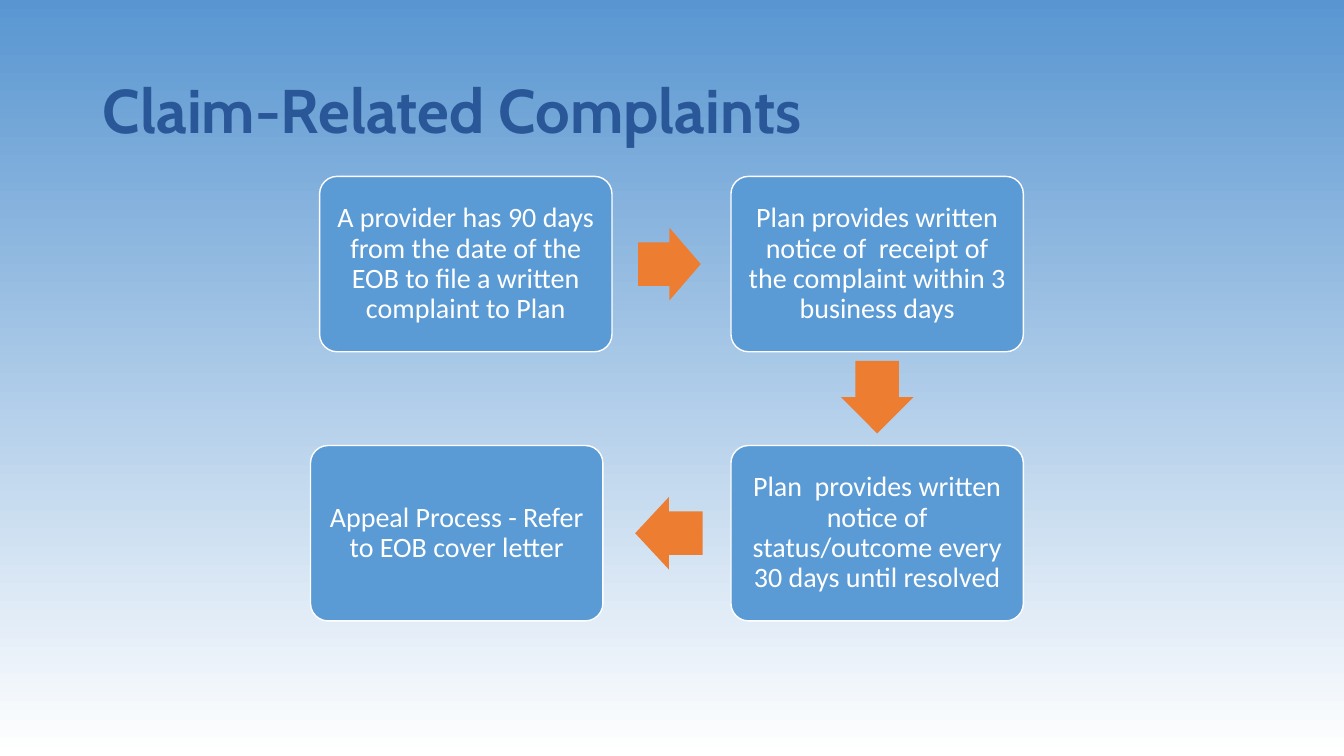
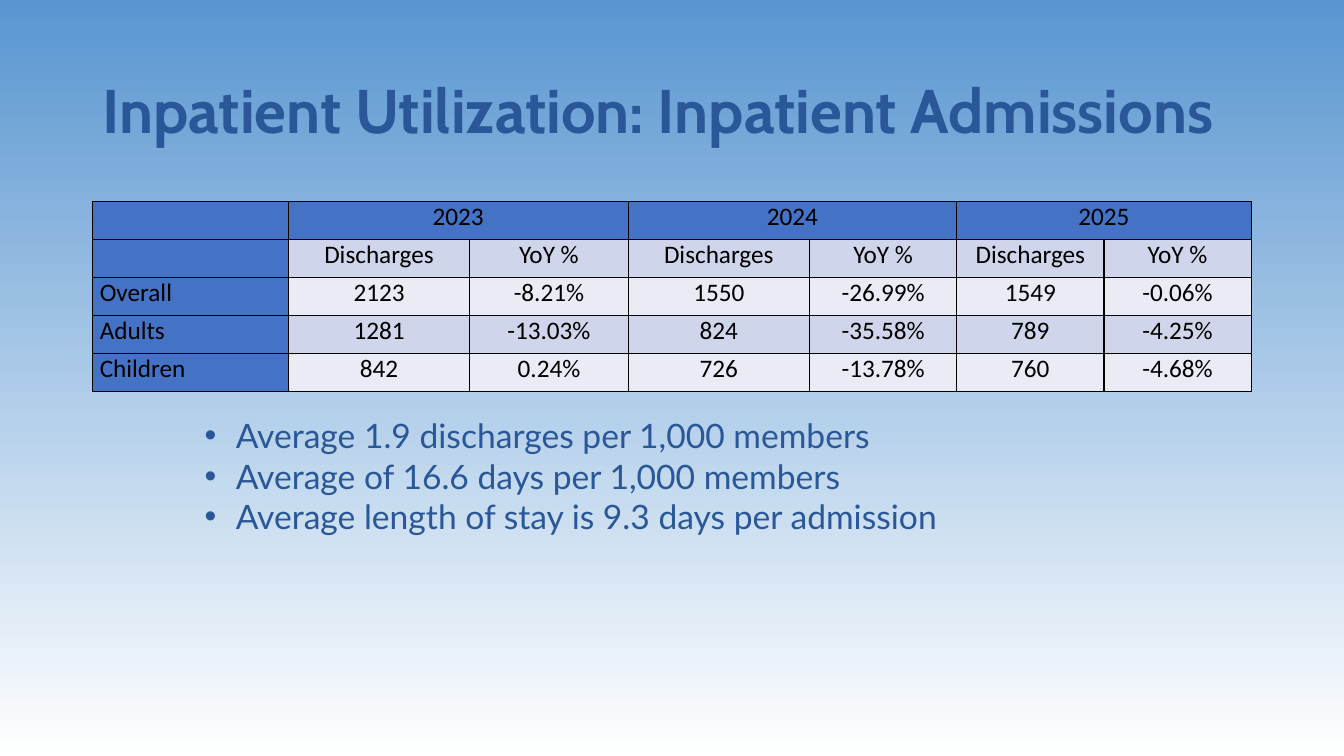
from dataclasses import dataclass

from lxml import etree
from pptx import Presentation
from pptx.dml.color import RGBColor
from pptx.enum.shapes import MSO_SHAPE
from pptx.enum.text import MSO_ANCHOR, PP_ALIGN
from pptx.oxml.ns import qn
from pptx.util import Inches, Pt

LEFT, CENTER = PP_ALIGN.LEFT, PP_ALIGN.CENTER
TOP, MIDDLE = MSO_ANCHOR.TOP, MSO_ANCHOR.MIDDLE
ROUND = MSO_SHAPE.ROUNDED_RECTANGLE
RIGHT_ARROW = MSO_SHAPE.RIGHT_ARROW
DOWN_ARROW = MSO_SHAPE.DOWN_ARROW
LEFT_ARROW = MSO_SHAPE.LEFT_ARROW


@dataclass(frozen=True)
class Theme:
    sky: str = "5996D1"
    white: str = "FFFFFF"
    black: str = "000000"
    navy: str = "2A5798"
    box: str = "5B9BD5"
    arrow: str = "ED7D31"
    head: str = "4472C4"
    dark: str = "CFD5EA"
    pale: str = "E9EBF5"
    title_font: str = "Cabin"
    body_font: str = "Calibri"
    list_font: str = "Lato"
    title_size: int = 44
    list_size: int = 24
    box_size: int = 20
    cell_size: int = 18


T = Theme()

FLOW_TITLE = "Claim-Related Complaints"
BOX_W, BOX_H = 2.9, 1.74
ROW_1, ROW_2 = 1.75, 4.42
STEPS = [
    (3.17, ROW_1, "A provider has 90 days from the date of the EOB to file a written complaint to Plan"),
    (7.25, ROW_1, "Plan provides written notice of  receipt of the complaint within 3 business days"),
    (7.25, ROW_2, "Plan  provides written notice of status/outcome every 30 days until resolved"),
    (3.08, ROW_2, "Appeal Process - Refer to EOB cover letter"),
]
ARROWS = [
    (RIGHT_ARROW, 6.33, 2.26, 0.62),
    (DOWN_ARROW, 8.34, 3.58, 0.72),
    (LEFT_ARROW, 6.3, 4.93, 0.67),
]
ARROW_H = 0.72

STAY_TITLE = "Inpatient Utilization: Inpatient Admissions"
YEARS = ["2023", "2024", "2025"]
PAIR = ["Discharges", "YoY %"]
DATA = [
    ["Overall", "2123", "-8.21%", "1550", "-26.99%", "1549", "-0.06%"],
    ["Adults", "1281", "-13.03%", "824", "-35.58%", "789", "-4.25%"],
    ["Children", "842", "0.24%", "726", "-13.78%", "760", "-4.68%"],
]
COLS = [1.94, 1.8, 1.57, 1.8, 1.46, 1.46, 1.46]
TABLE_H = 1.88
POINTS = [
    "Average 1.9 discharges per 1,000 members",
    "Average of 16.6 days per 1,000 members",
    "Average length of stay is 9.3 days per admission",
]


def rgb(code):
    return RGBColor.from_string(code)


def place(*sizes):
    return [Inches(size) for size in sizes]


def write(frame, *lines, size, color, font=T.body_font, bold=False,
          align=LEFT, space=1.0, bullet=None):
    for i, line in enumerate(lines):
        para = frame.paragraphs[0] if i == 0 else frame.add_paragraph()
        para.alignment = align
        para.line_spacing = space
        if bullet:
            props = para._p.get_or_add_pPr()
            props.set("marL", str(Inches(0.31)))
            props.set("indent", str(-Inches(0.31)))
            etree.SubElement(props, qn("a:buFont"), typeface="Arial")
            etree.SubElement(props, qn("a:buChar"), char=bullet)
        run = para.add_run()
        run.text = line
        run.font.name = font
        run.font.size = Pt(size)
        run.font.bold = bold
        run.font.color.rgb = rgb(color)


def text_box(slide, area, *lines, anchor=TOP, **style):
    frame = slide.shapes.add_textbox(*place(*area)).text_frame
    frame.word_wrap = True
    frame.vertical_anchor = anchor
    write(frame, *lines, **style)


def add_shape(slide, kind, area, fill, line=None):
    shape = slide.shapes.add_shape(kind, *place(*area))
    shape.shadow.inherit = False
    shape.fill.solid()
    shape.fill.fore_color.rgb = rgb(fill)
    if line:
        shape.line.color.rgb = rgb(line)
        shape.line.width = Pt(1)
    else:
        shape.line.fill.background()
    return shape


def new_slide(deck, title):
    slide = deck.slides.add_slide(deck.slide_layouts[6])
    fill = slide.background.fill
    fill.gradient()
    fill.gradient_angle = 270
    for stop, color, point in zip(fill.gradient_stops, (T.sky, T.white), (0, 1)):
        stop.color.rgb = rgb(color)
        stop.position = point
    text_box(slide, (0.92, 0.4, 11.5, 1.45), title, anchor=MIDDLE, size=T.title_size,
             color=T.navy, font=T.title_font, bold=True, space=0.9)
    return slide


def add_step(slide, left, top, text):
    box = add_shape(slide, ROUND, (left, top, BOX_W, BOX_H), T.box, T.white)
    box.adjustments[0] = 0.1
    frame = box.text_frame
    frame.word_wrap = True
    frame.vertical_anchor = MIDDLE
    frame.margin_left = frame.margin_right = Inches(0.08)
    frame.margin_top = frame.margin_bottom = Inches(0.08)
    write(frame, text, size=T.box_size, color=T.white, align=CENTER, space=0.9)


def flow_slide(deck):
    slide = new_slide(deck, FLOW_TITLE)
    for step in STEPS:
        add_step(slide, *step)
    for kind, left, top, width in ARROWS:
        arrow = add_shape(slide, kind, (left, top, width, ARROW_H), T.arrow)
        arrow.adjustments[0] = 0.6
        arrow.adjustments[1] = 0.5


def add_edges(cell):
    props = cell._tc.get_or_add_tcPr()
    for side in ("lnL", "lnR", "lnT", "lnB"):
        edge = etree.SubElement(props, qn("a:" + side), w=str(Pt(1)))
        fill = etree.SubElement(edge, qn("a:solidFill"))
        etree.SubElement(fill, qn("a:srgbClr"), val=T.black)


def fill_cell(cell, text, row, col):
    add_edges(cell)
    cell.margin_left = cell.margin_right = Inches(0.07)
    cell.margin_top = cell.margin_bottom = 0
    band = T.dark if row % 2 else T.pale
    cell.fill.solid()
    cell.fill.fore_color.rgb = rgb(T.head if row == 0 or col == 0 else band)
    write(cell.text_frame, text, size=T.cell_size, color=T.black,
          align=CENTER if col else LEFT)


def add_grid(slide):
    top = [""] + [text for year in YEARS for text in (year, "")]
    rows = [top, [""] + PAIR * len(YEARS)] + DATA
    area = place(0.92, 2, sum(COLS), TABLE_H)
    grid = slide.shapes.add_table(len(rows), len(COLS), *area).table
    grid.first_row = grid.horz_banding = False
    for col, width in zip(grid.columns, COLS):
        col.width = Inches(width)
    for r, row in enumerate(rows):
        grid.rows[r].height = Inches(TABLE_H / len(rows))
        for c, text in enumerate(row):
            fill_cell(grid.cell(r, c), text, r, c)
    for c in range(1, len(COLS), 2):
        grid.cell(0, c).merge(grid.cell(0, c + 1))


def stay_slide(deck):
    slide = new_slide(deck, STAY_TITLE)
    add_grid(slide)
    text_box(slide, (1.93, 4.07, 10.81, 1.31), *POINTS, size=T.list_size,
             color=T.navy, font=T.list_font, bullet="•")


def main():
    deck = Presentation()
    deck.slide_width, deck.slide_height = place(13.33, 7.5)
    flow_slide(deck)
    stay_slide(deck)
    deck.save("out.pptx")


if __name__ == "__main__":
    main()
